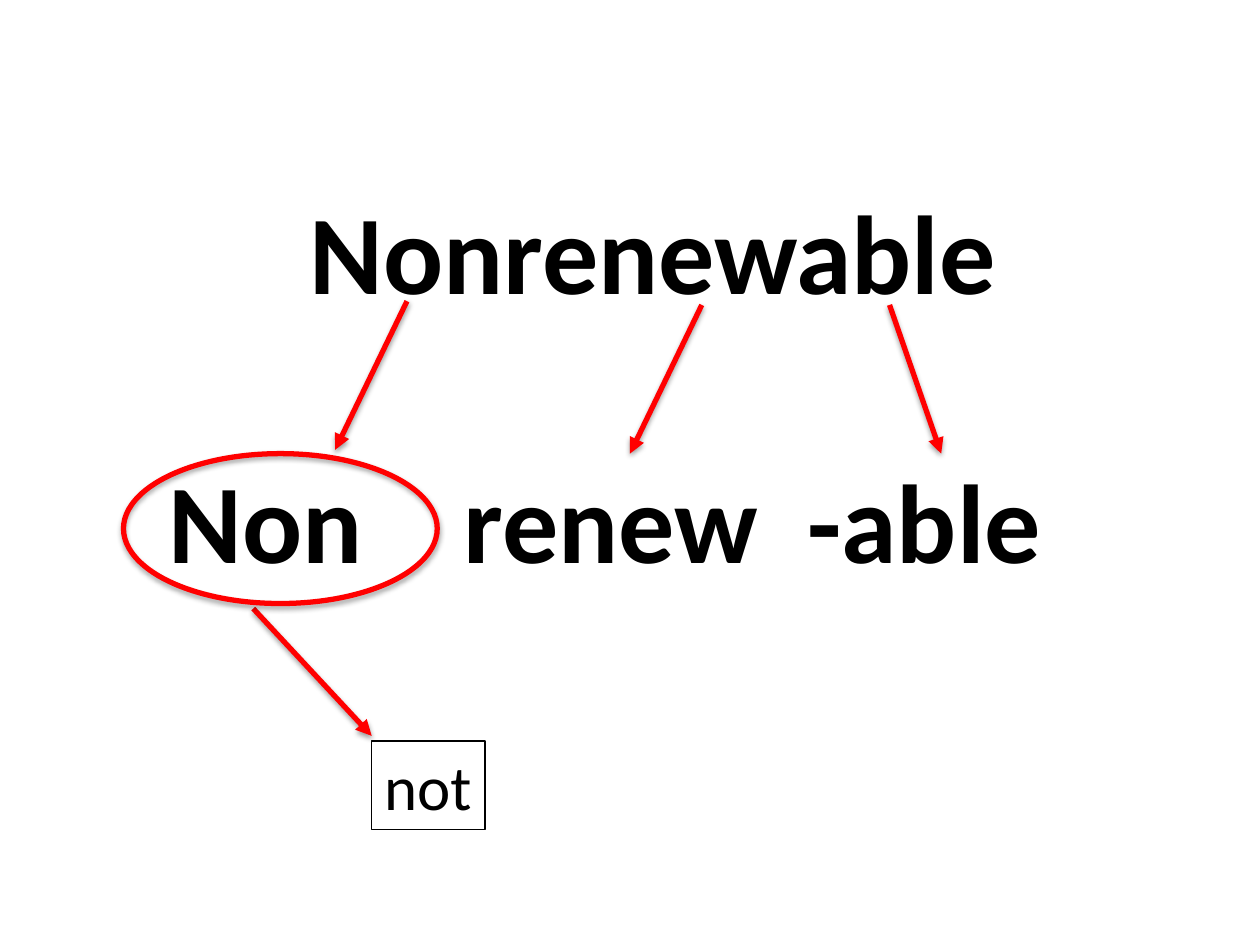
from dataclasses import dataclass

from lxml import etree
from pptx import Presentation
from pptx.dml.color import RGBColor
from pptx.enum.shapes import MSO_CONNECTOR, MSO_SHAPE
from pptx.enum.text import MSO_AUTO_SIZE, PP_ALIGN
from pptx.oxml.ns import qn
from pptx.util import Inches, Pt

LINE, OVAL = MSO_CONNECTOR.STRAIGHT, MSO_SHAPE.OVAL
CENTER, LEFT = PP_ALIGN.CENTER, PP_ALIGN.LEFT
GROW = MSO_AUTO_SIZE.SHAPE_TO_FIT_TEXT
RED = RGBColor(0xFF, 0x00, 0x00)
BLACK = RGBColor(0x00, 0x00, 0x00)
FONT = "Calibri"
WIDE, HIGH = Inches(10), Inches(7.5)
DROP = 15.73  # fall of each arrow below the whole word, % of height


@dataclass
class Arrow:
    """Ends as percent of the slide's width and height."""
    x1: float
    y1: float
    x2: float
    y2: float


def across(share: float) -> int:
    return round(WIDE * share / 100)


def down(share: float) -> int:
    return round(HIGH * share / 100)


def area(x: float, y: float, w: float, h: float) -> tuple:
    return across(x), down(y), across(w), down(h)


def write(para, text: str, size: int, bold: bool = False) -> None:
    run = para.add_run()
    run.text = text
    font = run.font
    font.name, font.size, font.bold = FONT, Pt(size), bold
    font.color.rgb = BLACK


def add_tabs(para, stops: list) -> None:
    tabs = etree.SubElement(para._p.get_or_add_pPr(), qn("a:tabLst"))
    for stop in stops:
        etree.SubElement(tabs, qn("a:tab"), pos=str(Inches(stop)), algn="l")


def draw_arrow(slide, arrow: Arrow) -> None:
    # The theme's soft shadow stays on
    link = slide.shapes.add_connector(
        LINE, across(arrow.x1), down(arrow.y1),
        across(arrow.x2), down(arrow.y2))
    link.line.color.rgb, link.line.width = RED, Pt(3)
    stroke = link._element.spPr.find(qn("a:ln"))
    etree.SubElement(stroke, qn("a:tailEnd"), type="triangle")


def main() -> None:
    deck = Presentation()
    deck.slide_width, deck.slide_height = WIDE, HIGH
    slide = deck.slides.add_slide(deck.slide_layouts[6])
    shapes = slide.shapes

    # Whole word above its parts
    frame = shapes.add_textbox(*area(12.4, 18.67, 78.8, 58.8)).text_frame
    frame.word_wrap = True
    whole = frame.paragraphs[0]
    whole.alignment = CENTER
    write(whole, "Nonrenewable", 64, True)
    parts = frame.add_paragraph()
    parts.alignment = LEFT
    parts.space_before = Pt(77)
    add_tabs(parts, [2.34, 5.07])
    write(parts, "Non\trenew\t-able", 64, True)

    # Arrows from the word to its parts, then from the prefix to its meaning
    falls = [(55.7, 32.27, 50), (70.6, 32.27, 74.7), (32.3, 31.87, 26.6)]
    arrows = [Arrow(x1, y, x2, y + DROP) for x1, y, x2 in falls]
    arrows.append(Arrow(20.1, 64.4, 29.5, 77.87))
    for arrow in arrows:
        draw_arrow(slide, arrow)

    # Ring around the prefix
    ring = shapes.add_shape(OVAL, *area(9.8, 48, 24.9, 15.87))
    ring.fill.background()
    ring.line.color.rgb, ring.line.width = RED, Pt(3)

    # Meaning of the prefix
    box = shapes.add_textbox(*area(29.5, 78.4, 9, 9.4))
    box.line.color.rgb, box.line.width = BLACK, Pt(0.75)
    box.text_frame.word_wrap = False
    box.text_frame.auto_size = GROW
    write(box.text_frame.paragraphs[0], "not", 36)

    deck.save("out.pptx")


if __name__ == "__main__":
    main()
